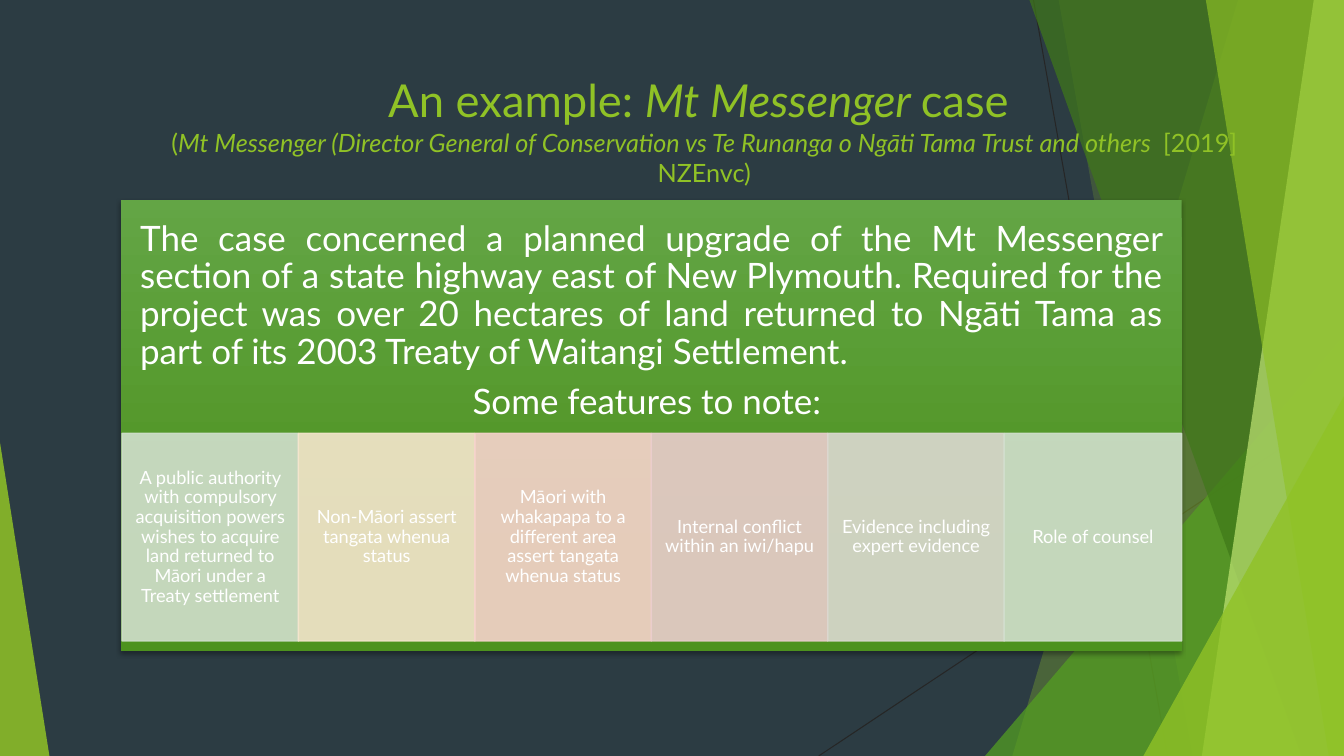
from dataclasses import dataclass

from lxml.etree import SubElement
from pptx import Presentation
from pptx.dml.color import RGBColor
from pptx.enum.shapes import MSO_CONNECTOR, MSO_SHAPE
from pptx.enum.text import MSO_ANCHOR, MSO_AUTO_SIZE, PP_ALIGN
from pptx.oxml.ns import qn
from pptx.shapes.autoshape import Shape
from pptx.slide import Slide
from pptx.text.text import TextFrame, _Paragraph
from pptx.util import Emu, Pt

SCALE = 9144
WIDTH, HEIGHT = 1333, 750
FONT = "Lato"

NIGHT = RGBColor(0x2C, 0x3C, 0x43)
INK = RGBColor(0x26, 0x26, 0x26)
WHITE = RGBColor(0xFF, 0xFF, 0xFF)
LIME = RGBColor(0x90, 0xC2, 0x26)
GREEN = RGBColor(0x54, 0xA0, 0x21)
FOREST = RGBColor(0x3F, 0x78, 0x19)
PALE = RGBColor(0xC0, 0xE4, 0x74)
LEAF = RGBColor(0x63, 0xA5, 0x45)
MOSS = RGBColor(0x4D, 0x92, 0x1E)
SAGE = RGBColor(0xD1, 0xDF, 0xCD)
CREAM = RGBColor(0xF5, 0xE6, 0xCD)
PEACH = RGBColor(0xF6, 0xD3, 0xCC)
ROSE = RGBColor(0xEA, 0xCD, 0xCD)
STONE = RGBColor(0xDC, 0xD9, 0xD1)


@dataclass(frozen=True)
class Box:
    left: int
    top: int
    width: int
    height: int

    def emu(self) -> tuple[Emu, Emu, Emu, Emu]:
        return px(self.left), px(self.top), px(self.width), px(self.height)


@dataclass(frozen=True)
class Ray:
    start: tuple[int, int]
    end: tuple[int, int]


@dataclass(frozen=True)
class Band:
    top: int
    base: int
    color: RGBColor
    alpha: int


@dataclass(frozen=True)
class Peak:
    box: Box
    apex: float
    color: RGBColor
    alpha: int


@dataclass(frozen=True)
class Part:
    text: str
    size: float
    italic: bool = False


@dataclass(frozen=True)
class Card:
    text: str
    color: RGBColor


RAYS = [Ray((1025, 0), (1158, 750)), Ray((1333, 403), (812, 750))]
DECOR = [
    Band(1228, 1004, LIME, 30),
    Band(1050, 1183, LIME, 20),
    Peak(Box(977, 333, 356, 417), 1.0, GREEN, 72),
    Band(1021, 1291, FOREST, 70),
    Band(1303, 1192, PALE, 70),
    Band(1196, 1318, LIME, 65),
    Peak(Box(1134, 393, 199, 357), 1.0, LIME, 80),
    Peak(Box(0, 439, 49, 311), 0.0, LIME, 85),
]
HEAD = [Part("An example: ", 32.4), Part("Mt Messenger ", 32.4, True), Part("case ", 32.4)]
CITE = [
    Part("(", 18),
    Part("Mt Messenger (Director General of Conservation vs Te Runanga o Ngāti Tama "
         "Trust and others  ", 18, True),
    Part("[2019] NZEnvc)", 18),
]
INTRO = [
    (PP_ALIGN.JUSTIFY, "The case concerned a planned upgrade of the Mt Messenger section of a "
     "state highway east of New Plymouth. Required for the project was over 20 hectares of land "
     "returned to Ngāti Tama as part of its 2003 Treaty of Waitangi Settlement. "),
    (PP_ALIGN.CENTER, "Some features to note: "),
]
CARDS = [
    Card("A public authority with compulsory acquisition powers wishes to acquire land "
         "returned to Māori under a Treaty settlement", SAGE),
    Card("Non-Māori assert tangata whenua status", CREAM),
    Card("Māori with whakapapa to a different area assert tangata whenua status", PEACH),
    Card("Internal conflict within an iwi/hapu", ROSE),
    Card("Evidence including expert evidence", STONE),
    Card("Role of counsel", SAGE),
]
TITLE = Box(141, 67, 1115, 120)
PANEL = Box(120, 198, 1052, 448)
LEAD = Box(120, 198, 1052, 242)
ROW = Box(121, 430, 1051, 206)


def px(count: int) -> Emu:
    return Emu(count * SCALE)


def fade(shape: Shape, alpha: int) -> None:
    for color in list(shape.element.spPr.iter(qn("a:srgbClr"))):
        SubElement(color, qn("a:alpha"), val=str(alpha * 1000))


def paint(shape: Shape, color: RGBColor, alpha: int, edge: bool = False) -> None:
    shape.shadow.inherit = False
    shape.fill.solid()
    shape.fill.fore_color.rgb = color
    if edge:
        shape.line.color.rgb = color
        shape.line.width = Pt(1)
    else:
        shape.line.fill.background()
    fade(shape, alpha)


def write(para: _Paragraph, part: Part, color: RGBColor) -> None:
    run = para.add_run()
    run.text = part.text
    run.font.name = FONT
    run.font.size = Pt(part.size)
    run.font.italic = part.italic
    run.font.color.rgb = color


def setup(frame: TextFrame, side: int, edge: int, anchor: MSO_ANCHOR) -> None:
    frame.word_wrap = True
    frame.auto_size = MSO_AUTO_SIZE.NONE
    frame.vertical_anchor = anchor
    frame.margin_left = frame.margin_right = px(side)
    frame.margin_top = frame.margin_bottom = px(edge)


def draw_ray(slide: Slide, ray: Ray) -> None:
    line = slide.shapes.add_connector(
        MSO_CONNECTOR.STRAIGHT, *map(px, ray.start), *map(px, ray.end))
    line.line.color.rgb = INK
    line.line.width = Pt(0.75)
    SubElement(line.element.spPr, qn("a:effectLst"))


def draw_decor(slide: Slide, item: Band | Peak) -> None:
    if isinstance(item, Band):
        path = slide.shapes.build_freeform(item.top, 0, scale=SCALE)
        path.add_line_segments([(WIDTH, 0), (WIDTH, HEIGHT), (item.base, HEIGHT)])
        shape = path.convert_to_shape()
    else:
        shape = slide.shapes.add_shape(MSO_SHAPE.ISOSCELES_TRIANGLE, *item.box.emu())
        shape.adjustments[0] = item.apex
    paint(shape, item.color, item.alpha)


def draw_title(slide: Slide) -> None:
    title = slide.shapes.title
    title.left, title.top, title.width, title.height = TITLE.emu()
    setup(title.text_frame, 10, 5, MSO_ANCHOR.TOP)
    para = title.text_frame.paragraphs[0]
    para.alignment = PP_ALIGN.CENTER
    for part in HEAD:
        write(para, part, LIME)
    para.add_line_break()
    for part in CITE:
        write(para, part, LIME)
    title.element.getparent().append(title.element)


def draw_panel(slide: Slide) -> None:
    panel = slide.shapes.add_shape(MSO_SHAPE.RECTANGLE, *PANEL.emu())
    panel.fill.gradient()
    panel.fill.gradient_angle = 270
    for stop, color, place in zip(panel.fill.gradient_stops, (LEAF, MOSS), (0, 0.78)):
        stop.color.rgb = color
        stop.position = place
    panel.line.fill.background()
    panel.shadow.inherit = False
    effect = panel.element.spPr.find(qn("a:effectLst"))
    shade = SubElement(effect, qn("a:outerShdw"), blurRad=str(Pt(3)), dist=str(Pt(2)),
                       dir="5400000", rotWithShape="0")
    tint = SubElement(shade, qn("a:srgbClr"), val="000000")
    SubElement(tint, qn("a:alpha"), val="35000")


def draw_lead(slide: Slide) -> None:
    frame = slide.shapes.add_textbox(*LEAD.emu()).text_frame
    setup(frame, 19, 19, MSO_ANCHOR.MIDDLE)
    for index, (align, text) in enumerate(INTRO):
        para = frame.add_paragraph() if index else frame.paragraphs[0]
        para.alignment = align
        para.line_spacing = 0.9
        para.space_after = Pt(8.75)
        write(para, Part(text, 25), WHITE)


def draw_card(slide: Slide, index: int, card: Card) -> None:
    left, right = (ROW.left + step * ROW.width // len(CARDS) for step in (index, index + 1))
    box = Box(left, ROW.top, right - left, ROW.height)
    shape = slide.shapes.add_shape(MSO_SHAPE.RECTANGLE, *box.emu())
    paint(shape, card.color, 90, edge=True)
    setup(shape.text_frame, 10, 2, MSO_ANCHOR.MIDDLE)
    para = shape.text_frame.paragraphs[0]
    para.alignment = PP_ALIGN.CENTER
    para.line_spacing = 0.9
    write(para, Part(card.text, 13), WHITE)


def main() -> None:
    deck = Presentation()
    deck.slide_width, deck.slide_height = px(WIDTH), px(HEIGHT)
    slide = deck.slides.add_slide(deck.slide_layouts[5])
    slide.background.fill.solid()
    slide.background.fill.fore_color.rgb = NIGHT
    for ray in RAYS:
        draw_ray(slide, ray)
    for item in DECOR:
        draw_decor(slide, item)
    draw_title(slide)
    draw_panel(slide)
    draw_lead(slide)
    for index, card in enumerate(CARDS):
        draw_card(slide, index, card)
    deck.save("out.pptx")


if __name__ == "__main__":
    main()
